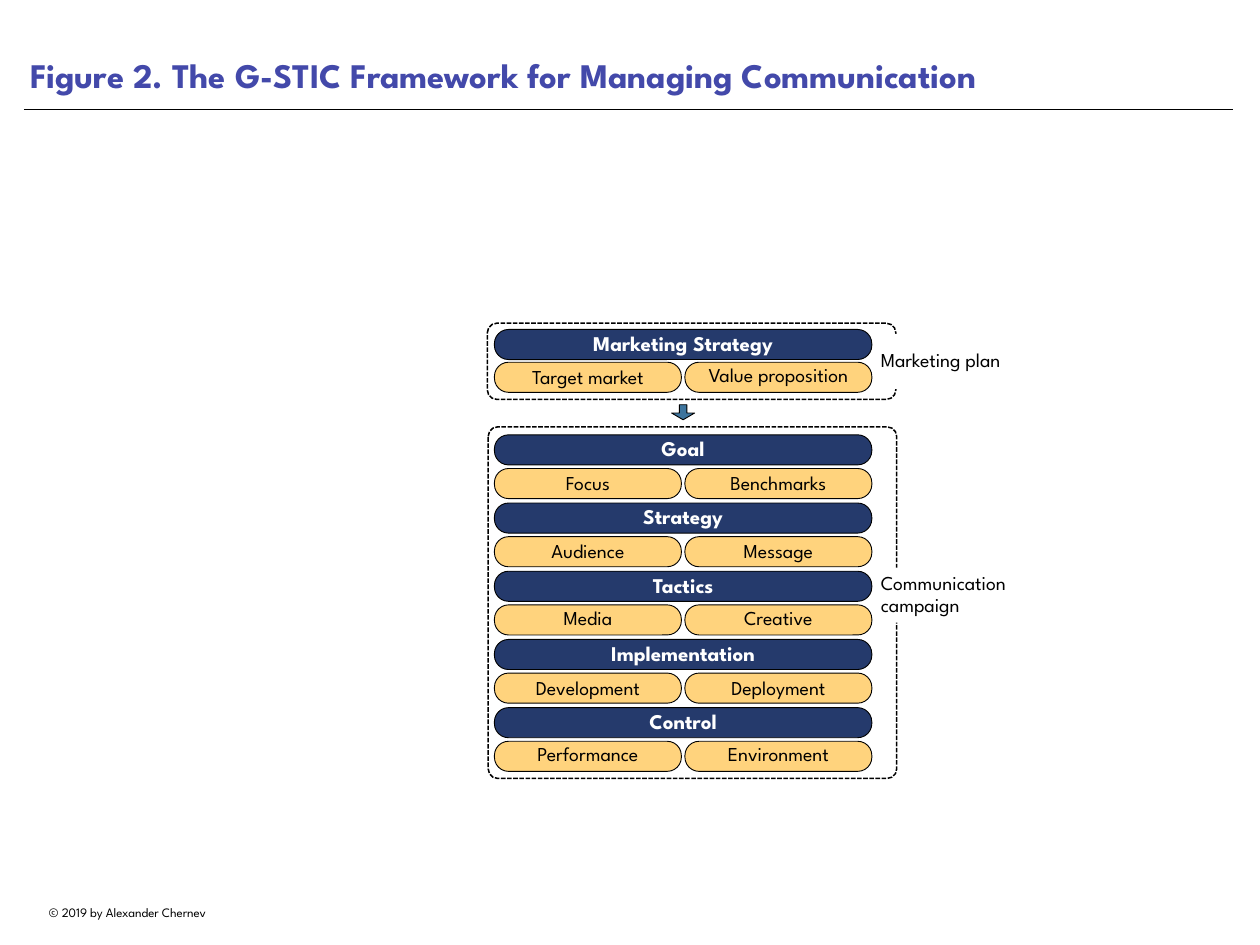
from pptx import Presentation
from pptx import util as u
from pptx.dml.color import RGBColor
from pptx.enum import dml, shapes, text
from pptx.oxml.ns import qn
from lxml import etree

PX = 9144  # 100 px to the inch
THEME = {
    "font": "League Spartan",
    "title": (28, "4349AA", True),
    "head": (17, "FFFFFF", True),
    "body": (16, "000000", False),
    "note": (10.5, "000000", False),
    "navy": "253A6C", "gold": "FFD37D", "blue": "3D749D",
    "white": "FFFFFF", "ink": "000000",
}
KIND = shapes.MSO_SHAPE
MID, LOW = text.MSO_ANCHOR.MIDDLE, text.MSO_ANCHOR.BOTTOM
LEFT, MIDDLE = text.PP_ALIGN.LEFT, text.PP_ALIGN.CENTER

deck = Presentation()
deck.slide_width, deck.slide_height = 1422 * PX, 1067 * PX
slide = deck.slides.add_slide(deck.slide_layouts[6])


def write(box, words, style, align, anchor, inset=0, lead=None, wrap=True):
    frame = box.text_frame
    frame.word_wrap = wrap
    frame.vertical_anchor = anchor
    frame.margin_left = frame.margin_right = inset * PX
    frame.margin_top = frame.margin_bottom = inset * PX
    line = frame.paragraphs[0]
    line.text, line.alignment, line.line_spacing = words, align, lead
    size, color, bold = THEME[style]
    line.font.name, line.font.size, line.font.bold = THEME["font"], u.Pt(size), bold
    line.font.color.rgb = RGBColor.from_string(color)


def draw(kind, area, adjust, fill=None, width=0.75):
    """Add a shape; no fill or zero width leaves that part empty."""
    shape = slide.shapes.add_shape(kind, *(n * PX for n in area))
    shape.shadow.inherit = False
    for i, value in enumerate(adjust):
        shape.adjustments[i] = value
    if fill:
        shape.fill.solid()
        shape.fill.fore_color.rgb = RGBColor.from_string(THEME[fill])
    else:
        shape.fill.background()
    if width:
        shape.line.color.rgb = RGBColor.from_string(THEME["ink"])
        shape.line.width = u.Pt(width)
    else:
        shape.line.fill.background()
    return shape


# Title, rule and footer
title = slide.shapes.add_textbox(27 * PX, 0, 1364 * PX, 115 * PX)
write(title, "Figure 2. The G-STIC Framework for Managing Communication",
      "title", LEFT, LOW, inset=7)
rule = slide.shapes.add_connector(
    shapes.MSO_CONNECTOR.STRAIGHT, 27 * PX, 124 * PX, 1391 * PX, 124 * PX)
rule.line.color.rgb = RGBColor.from_string(THEME["ink"])
rule.line.width = u.Pt(0.5)
etree.SubElement(rule._element.spPr, qn("a:effectLst"))
note = slide.shapes.add_textbox(27 * PX, 1016 * PX, 234 * PX, 28 * PX)
write(note, "© 2019 by Alexander Chernev", "note", MIDDLE, text.MSO_ANCHOR.TOP,
      inset=5, wrap=False)

# Dashed frames, each with a label that breaks its right side
groups = [
    ((550, 365, 461, 86), 0.124, (994, 377, 154, 62), "Marketing plan"),
    ((551, 482, 461, 397), 0.027, (994, 641, 188, 62), "Communication campaign"),
]
for area, bend, spot, words in groups:
    frame = draw(KIND.ROUNDED_RECTANGLE, area, [bend], width=1.25)
    frame.line.dash_style = dml.MSO_LINE.SQUARE_DOT
    label = draw(KIND.ROUNDED_RECTANGLE, spot, [0.005], "white", 0)
    write(label, words, "body", LEFT, MID, lead=0.9)

# Each stage: a heading pill above two half-width pills
stages = [
    (372, 37, "Marketing Strategy", ("Target market", LOW), ("Value proposition", MID)),
]
steps = [
    ("Goal", "Focus", "Benchmarks", LOW),
    ("Strategy", "Audience", "Message", LOW),
    ("Tactics", "Media", "Creative", MID),
    ("Implementation", "Development", "Deployment", LOW),
    ("Control", "Performance", "Environment", MID),
]
for i, (head, one, two, anchor) in enumerate(steps):
    stages.append((491 + 77 * i, 38, head, (one, anchor), (two, anchor)))

for top, drop, head, *parts in stages:
    pill = draw(KIND.ROUNDED_RECTANGLE, (558, top, 426, 34), [0.47], "navy")
    write(pill, head, "head", MIDDLE, MID, lead=0.9)
    for col, (words, anchor) in enumerate(parts):
        area = (558 + 215 * col, top + drop, 211, 34)
        pill = draw(KIND.ROUNDED_RECTANGLE, area, [0.47], "gold")
        write(pill, words, "body", MIDDLE, anchor, lead=0.8)

draw(KIND.DOWN_ARROW, (758, 457, 26, 17), [0.329, 0.449], "blue")

deck.save("out.pptx")
